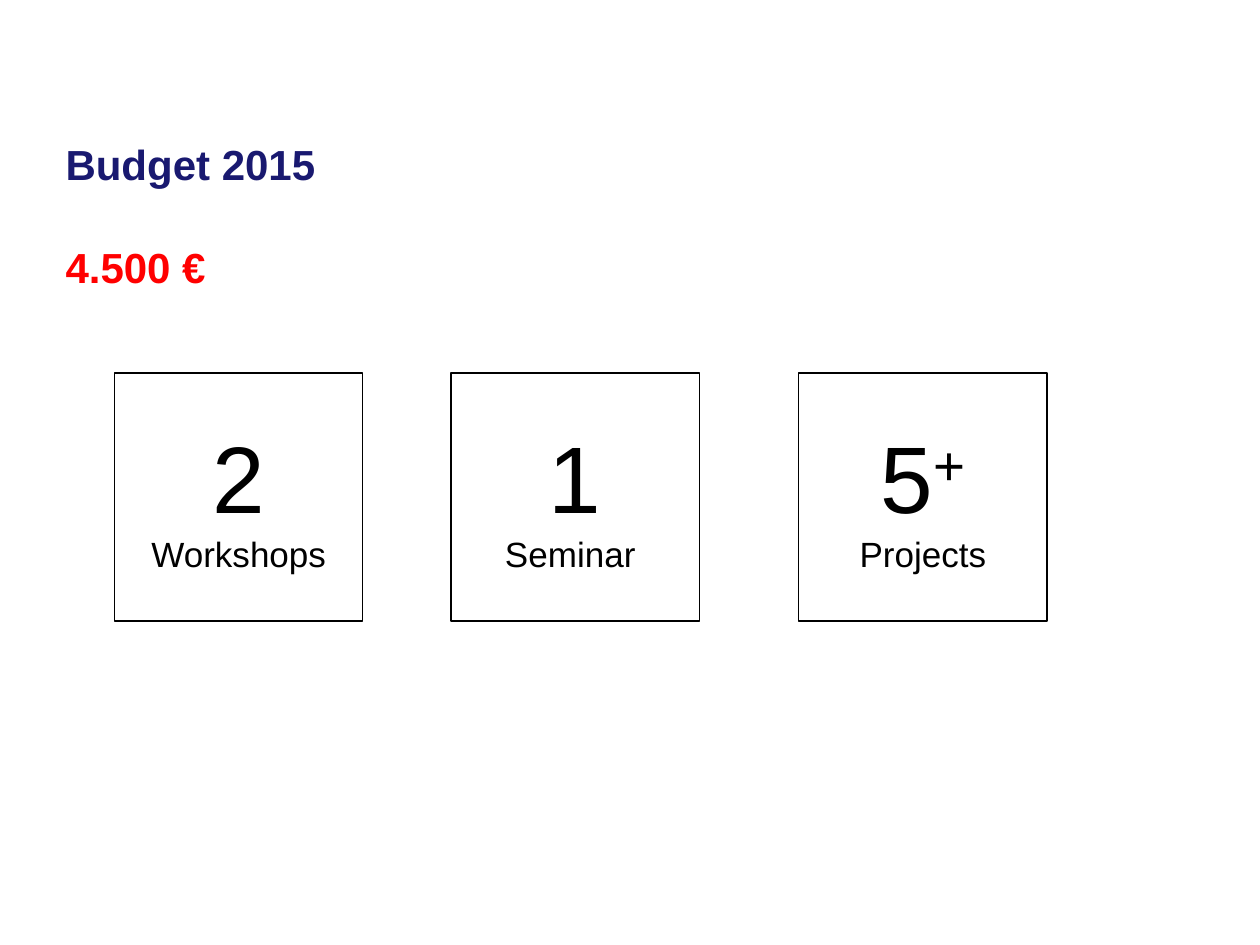
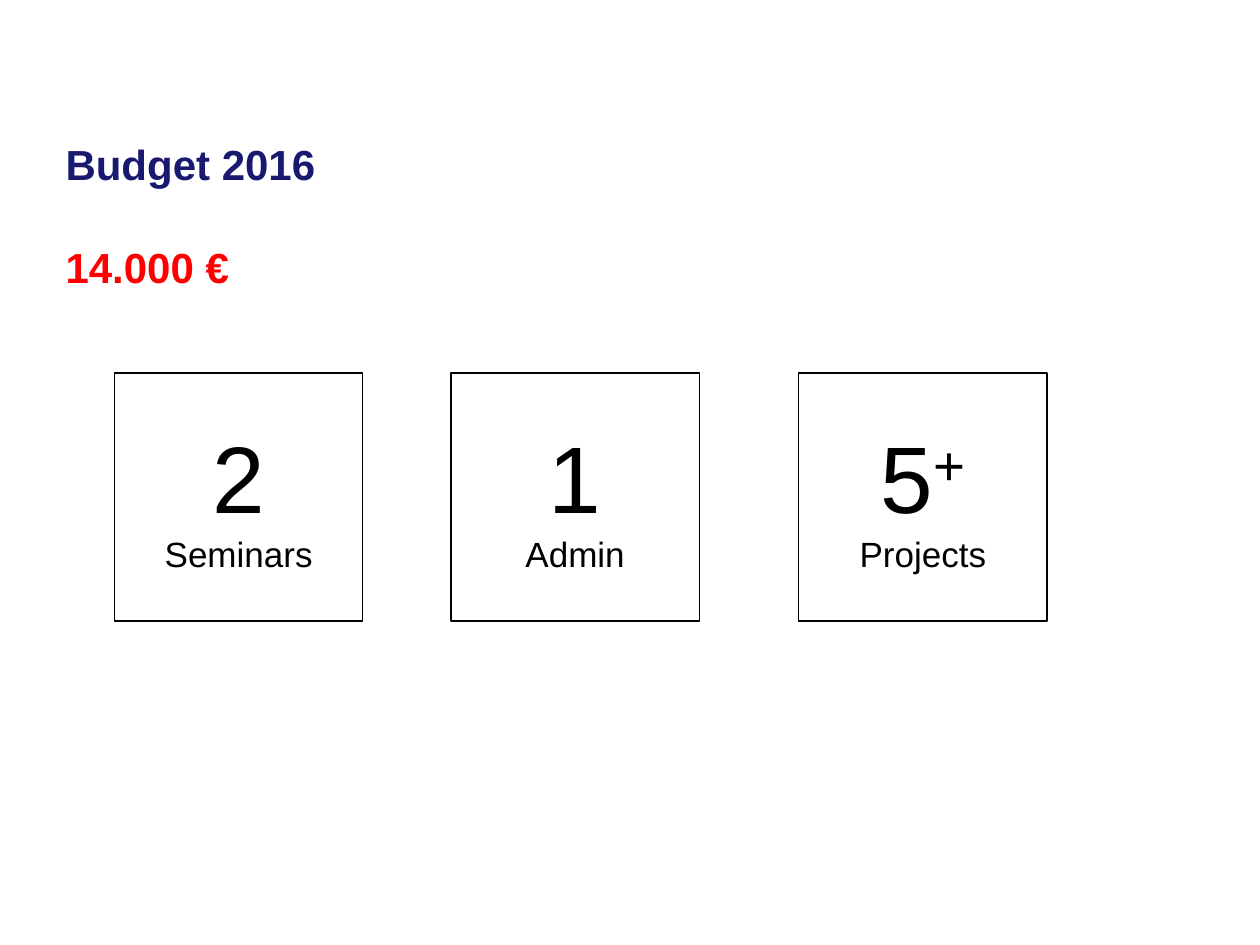
from dataclasses import dataclass

from pptx import Presentation
from pptx.dml.color import RGBColor
from pptx.enum.shapes import MSO_SHAPE
from pptx.enum.text import MSO_ANCHOR, MSO_AUTO_SIZE, PP_ALIGN
from pptx.util import Inches, Pt


@dataclass(frozen=True)
class Theme:
    font: str = "Arial"
    heading: RGBColor = RGBColor(0x19, 0x19, 0x70)
    amount: RGBColor = RGBColor(0xFF, 0x00, 0x00)
    ink: RGBColor = RGBColor(0x00, 0x00, 0x00)
    title_size: int = 24
    count_size: int = 54
    label_size: int = 20


theme = Theme()

# Each year: heading, amount, and (count, superscript, label) per activity
budgets = [
    ("Budget 2015", "4.500 €",
     [("2", "", "Workshops"), ("1", "", "Seminar "), ("5", "+", "Projects")]),
    ("Budget 2016", "14.000 €",
     [("2", "", "Seminars"), ("1", "", "Admin"), ("5", "+", "Projects")]),
]
card_lefts = [0.91, 3.58, 6.34]
card_top, card_side = 2.96, 1.97


def style_runs(paragraph, size, color, bold=False):
    for run in paragraph.runs:
        run.font.name = theme.font
        run.font.size = Pt(size)
        run.font.bold = bold
        run.font.color.rgb = color


deck = Presentation()
deck.slide_width, deck.slide_height = Inches(10), Inches(7.5)
title_only = deck.slide_layouts[5]

for heading, amount, activities in budgets:
    slide = deck.slides.add_slide(title_only)

    # Title with the year's amount below it
    title = slide.shapes.title
    title.left, title.top = Inches(0.42), Inches(1.08)
    title.width, title.height = Inches(6.67), Inches(1.25)
    title_text = title.text_frame
    title_text.auto_size = MSO_AUTO_SIZE.NONE
    title_text.vertical_anchor = MSO_ANCHOR.MIDDLE
    title_text.text = f"{heading}\n{amount}"
    for line, color in zip(title_text.paragraphs, (theme.heading, theme.amount)):
        line.alignment = PP_ALIGN.LEFT
        style_runs(line, theme.title_size, color, bold=True)
    title_text.paragraphs[1].space_before = Pt(30)

    # One square card per activity
    for left, (count, superscript, label) in zip(card_lefts, activities):
        card = slide.shapes.add_shape(
            MSO_SHAPE.RECTANGLE, Inches(left), Inches(card_top),
            Inches(card_side), Inches(card_side))
        card.shadow.inherit = False
        card.fill.background()
        card.line.color.rgb = theme.ink
        card.line.width = Pt(0.75)

        card_text = card.text_frame
        card_text.vertical_anchor = MSO_ANCHOR.MIDDLE
        card_text.text = f"{count}\n{label}"
        count_line, label_line = card_text.paragraphs
        if superscript:
            raised = count_line.add_run()
            raised.text = superscript
            raised._r.get_or_add_rPr().set("baseline", "30000")
        for line, size in ((count_line, theme.count_size),
                           (label_line, theme.label_size)):
            line.alignment = PP_ALIGN.CENTER
            style_runs(line, size, theme.ink)

deck.save("out.pptx")
